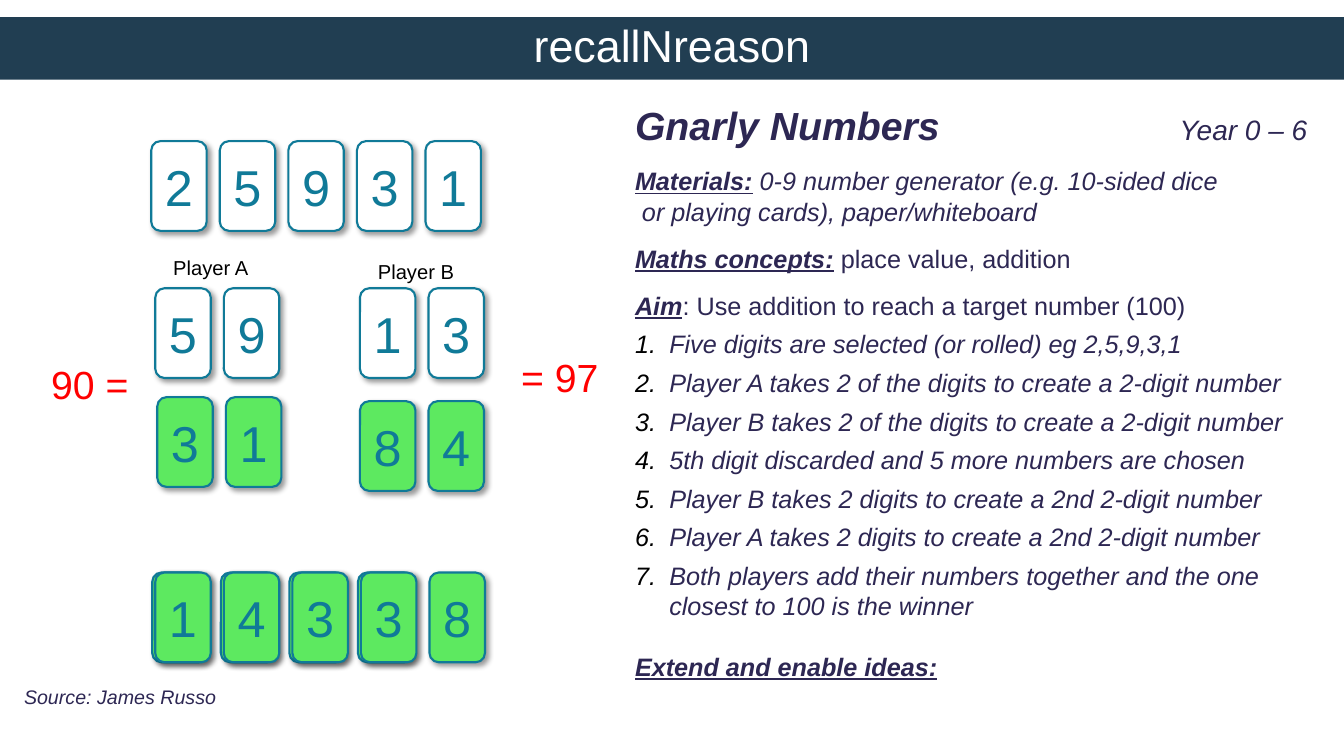
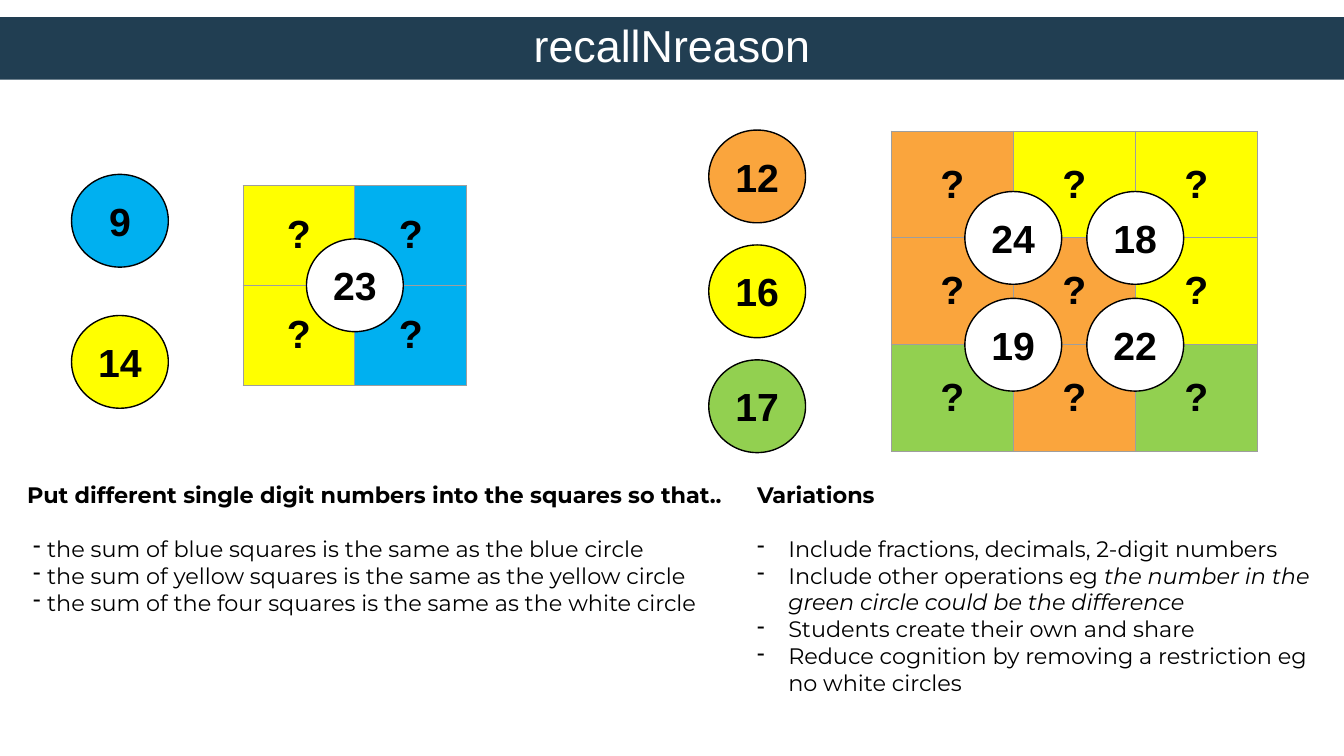
"""Build two maths game slides: a card game and a number square puzzle."""
from lxml import etree
from pptx import Presentation
from pptx.dml.color import RGBColor
from pptx.enum.shapes import MSO_SHAPE
from pptx.enum.text import MSO_ANCHOR, PP_ALIGN
from pptx.oxml.ns import qn
from pptx.util import Inches, Pt

RECT, OVAL = MSO_SHAPE.RECTANGLE, MSO_SHAPE.OVAL
CARD = MSO_SHAPE.FLOWCHART_ALTERNATE_PROCESS
CENTER, MIDDLE = PP_ALIGN.CENTER, MSO_ANCHOR.MIDDLE

NAVY, INK, TEAL, RED = "213E52", "2D2753", "107A98", "FF0000"
BLACK, WHITE, GRID_GREY = "000000", "FFFFFF", "9E9E9E"
CARD_GREEN, BLUE, YELLOW = "5DE960", "00B0F0", "FFFF00"
ORANGE, GREEN = "FAA53D", "92D050"
BODY_FONT, NOTE_FONT = "Arial", "Montserrat"
CARD_W, CARD_H, CARD_PITCH = 0.55, 0.89, 0.68
CIRCLE_W, CIRCLE_H = 0.96, 0.92


def rgb(hex_code):
    """Turn a hex string into a colour."""
    return RGBColor.from_string(hex_code)


def add_run(paragraph, text, size, color=BLACK, font=BODY_FONT, style=""):
    """Append a run; style holds any of the letters b, i and u."""
    run = paragraph.add_run()
    run.text = text
    run.font.name = font
    run.font.size = Pt(size)
    run.font.color.rgb = rgb(color)
    run.font.bold = "b" in style
    run.font.italic = "i" in style
    run.font.underline = "u" in style


def add_xml(parent, tag, **attributes):
    """Append a drawing element with its attributes and return it."""
    names = {name: str(value) for name, value in attributes.items()}
    return etree.SubElement(parent, qn(tag), names)


def set_bullet(paragraph, margin, hang, tag, **attributes):
    """Give a paragraph a hanging black bullet or number."""
    properties = paragraph._p.get_or_add_pPr()
    properties.set("marL", str(Inches(margin)))
    properties.set("indent", str(-Inches(hang)))
    add_xml(add_xml(properties, "a:buClr"), "a:srgbClr", val=BLACK)
    add_xml(properties, tag, **attributes)


def add_frame(slide, left, top, width, height):
    """Add a wrapping text box and return its text frame."""
    box = slide.shapes.add_textbox(
        Inches(left), Inches(top), Inches(width), Inches(height))
    box.text_frame.word_wrap = True
    return box.text_frame


def add_paragraph(frame, before):
    """Append a paragraph with the given space before it."""
    paragraph = frame.add_paragraph()
    paragraph.space_before = Pt(before)
    return paragraph


def add_label(slide, left, top, width, height, text, size, color=BLACK, style=""):
    """Add a one-line label and return its paragraph."""
    paragraph = add_frame(slide, left, top, width, height).paragraphs[0]
    add_run(paragraph, text, size, color, style=style)
    return paragraph


def add_block(slide, kind, left, top, width, height, fill, line=None, weight=1):
    """Add a flat filled shape, outlined when a line colour is given."""
    block = slide.shapes.add_shape(
        kind, Inches(left), Inches(top), Inches(width), Inches(height))
    block.shadow.inherit = False
    block.fill.solid()
    block.fill.fore_color.rgb = rgb(fill)
    if line:
        block.line.color.rgb = rgb(line)
        block.line.width = Pt(weight)
    else:
        block.line.fill.background()
    return block


def write_centered(holder, text, size, color, style=""):
    """Write one centred run in the middle of a shape or cell."""
    holder.text_frame.word_wrap = True
    paragraph = holder.text_frame.paragraphs[0]
    paragraph.alignment = CENTER
    add_run(paragraph, text, size, color, style=style)


def add_banner(slide):
    """Draw the title band that every slide carries."""
    add_block(slide, RECT, 0, 0.17, 13.33, 0.62, NAVY)
    title = add_label(slide, 1.82, 0.13, 9.69, 0.64, "recallNreason", 32, WHITE)
    title.alignment = CENTER


def add_cards(slide, left, top, digits, fill):
    """Lay out a row of digit cards from the left."""
    for index, digit in enumerate(digits):
        card = add_block(slide, CARD, left + index * CARD_PITCH, top,
                         CARD_W, CARD_H, fill, TEAL, 1.5)
        effects = card._element.spPr.find(qn("a:effectLst"))
        shadow = add_xml(effects, "a:outerShdw", blurRad=Pt(4), dist=Pt(3),
                         dir=45 * 60000, algn="tl", rotWithShape=0)
        shade = add_xml(shadow, "a:srgbClr", val=BLACK)
        add_xml(shade, "a:alpha", val=40000)
        card.text_frame.vertical_anchor = MIDDLE
        write_centered(card, digit, 36, TEAL)


def add_card_game(slide, left, top):
    """Draw both deals, the players' hands and their totals."""
    add_cards(slide, left + 1.09, top, "25931", WHITE)
    for name, x, y, first, second, second_x, second_y in (
            ("Player A", 1.13, 1.08, "59", "31", 1.15, 2.54),
            ("Player B", 3.16, 1.12, "13", "84", 3.16, 2.58)):
        add_label(slide, left + x + 0.08, top + y, 1.27, 0.34, name, 14.4)
        add_cards(slide, left + x, top + 1.46, first, WHITE)
        add_cards(slide, left + second_x, top + second_y, second, CARD_GREEN)
    for x, digits in ((1.1, "1433"), (1.13, "14338")):
        add_cards(slide, left + x, top + 4.28, digits, CARD_GREEN)
    for total, x, y in (("90 =", 0, 2.13), ("= 97", 4.66, 2.06)):
        add_label(slide, left + x, top + y, 1.24, 0.57, total, 28, RED)


def add_game_rules(slide, left, top, width, height):
    """Write the game's heading, needs, aim and numbered steps."""
    frame = add_frame(slide, left, top, width, height)
    heading = frame.paragraphs[0]
    tabs = add_xml(heading._p.get_or_add_pPr(), "a:tabLst")
    add_xml(tabs, "a:tab", pos=Inches(width - 0.46), algn="r")
    add_run(heading, "Gnarly Numbers", 28, INK, style="bi")
    add_run(heading, "\tYear 0 – 6", 20, INK, style="i")
    for topic, details, style in (
            ("Materials:", (" 0-9 number generator (e.g. 10-sided dice",
                            " or playing cards), paper/whiteboard"), "i"),
            ("Maths concepts:", (" place value, addition",), ""),
            ("Aim", (": Use addition to reach a target number (100)",), "")):
        paragraph = add_paragraph(frame, 12)
        add_run(paragraph, topic, 18, INK, style="biu")
        for index, detail in enumerate(details):
            if index:
                paragraph.add_line_break()
            add_run(paragraph, detail, 18, INK, style=style)
    for step in (
            "Five digits are selected (or rolled) eg 2,5,9,3,1",
            "Player A takes 2 of the digits to create a 2-digit number",
            "Player B takes 2 of the digits to create a 2-digit number",
            "5th digit discarded and 5 more numbers are chosen",
            "Player B takes 2 digits to create a 2nd 2-digit number",
            "Player A takes 2 digits to create a 2nd 2-digit number",
            "Both players add their numbers together and the one "
            "closest to 100 is the winner"):
        paragraph = add_paragraph(frame, 6)
        set_bullet(paragraph, 0.34, 0.34, "a:buAutoNum", type="arabicPeriod")
        add_run(paragraph, step, 18, INK, style="i")
    add_run(add_paragraph(frame, 21.5), "Extend and enable ideas:", 18, INK, style="biu")


def add_circle(slide, left, top, number, fill):
    """Draw a circle that holds a sum."""
    circle = add_block(slide, OVAL, left, top, CIRCLE_W, CIRCLE_H, fill, BLACK)
    circle.text_frame.vertical_anchor = MIDDLE
    write_centered(circle, number, 28, BLACK, "b")


def set_borders(cell):
    """Outline a table cell in grey."""
    properties = cell._tc.get_or_add_tcPr()
    for index, side in enumerate(("a:lnL", "a:lnR", "a:lnT", "a:lnB")):
        border = add_xml(properties, side, w=Pt(0.75))
        add_xml(add_xml(border, "a:solidFill"), "a:srgbClr", val=GRID_GREY)
        properties.insert(index, border)


def add_squares(slide, left, top, cell_w, cell_h, tints):
    """Draw the table of unknown squares, one colour per cell."""
    size = len(tints)
    table = slide.shapes.add_table(
        size, size, Inches(left), Inches(top),
        Inches(size * cell_w), Inches(size * cell_h)).table
    table.first_row = table.horz_banding = False
    for row, row_tints in enumerate(tints):
        table.rows[row].height = Inches(cell_h)
        table.columns[row].width = Inches(cell_w)
        for column, tint in enumerate(row_tints):
            cell = table.cell(row, column)
            cell.fill.solid()
            cell.fill.fore_color.rgb = rgb(tint)
            cell.vertical_anchor = MIDDLE
            set_borders(cell)
            write_centered(cell, "?", 28, BLACK, "b")


def add_puzzle(slide, left, top, squares_at, cell, tints, clues, clue_pitch, sums):
    """Draw colour clues, the squares and a white sum on each inner crossing."""
    for index, (number, fill) in enumerate(clues):
        add_circle(slide, left, top + index * clue_pitch, number, fill)
    squares_x, squares_y = left + squares_at[0], top + squares_at[1]
    cell_w, cell_h = cell
    add_squares(slide, squares_x, squares_y, cell_w, cell_h, tints)
    for row, row_sums in enumerate(sums, 1):
        for column, number in enumerate(row_sums, 1):
            add_circle(slide, squares_x + column * cell_w - CIRCLE_W / 2,
                       squares_y + row * cell_h - CIRCLE_H / 2, number, WHITE)


def add_notes_list(slide, left, top, width, height, heading, margin, hang, items):
    """Write a bold heading above a dashed list of items made of styled runs."""
    frame = add_frame(slide, left, top, width, height)
    add_run(frame.paragraphs[0], heading, 16, font=NOTE_FONT, style="b")
    for index, runs in enumerate(items):
        paragraph = add_paragraph(frame, 0 if index else 19.5)
        set_bullet(paragraph, margin, hang, "a:buChar", char="-")
        for text, style in runs:
            add_run(paragraph, text, 16, font=NOTE_FONT, style=style)


def build_card_slide(slide):
    """Compose the card game slide."""
    add_banner(slide)
    add_game_rules(slide, 6.2, 0.96, 7.13, 5.91)
    add_card_game(slide, 0.41, 1.4)
    add_label(slide, 0.14, 6.75, 6.94, 0.34, "Source: James Russo", 14, INK, "i")


def build_puzzle_slide(slide):
    """Compose the number square slide."""
    add_banner(slide)
    add_puzzle(slide, 0.71, 1.73, (1.7, 0.11), (1.11, 0.99),
               ((YELLOW, BLUE), (YELLOW, BLUE)),
               (("9", BLUE), ("14", YELLOW)), 1.4, (("23",),))
    add_puzzle(slide, 7.03, 1.29, (1.81, 0.01), (1.21, 1.06),
               ((ORANGE, YELLOW, YELLOW), (ORANGE, ORANGE, YELLOW),
                (GREEN, ORANGE, GREEN)),
               (("12", ORANGE), ("16", YELLOW), ("17", GREEN)), 1.14,
               (("24", "18"), ("19", "22")))
    add_notes_list(
        slide, 0.17, 4.72, 7.33, 1.45,
        "Put different single digit numbers into the squares so that..", 0.2, 0.14,
        ((("the sum of blue squares is the same as the blue circle", ""),),
         (("the sum of yellow squares is the same as the yellow circle", ""),),
         (("the sum of the four squares is the same as the white circle", ""),)))
    add_notes_list(
        slide, 7.41, 4.72, 5.92, 2.6, "Variations", 0.31, 0.31,
        ((("Include fractions, decimals, 2-digit numbers", ""),),
         (("Include other operations eg ", ""),
          ("the number in the green circle could be the difference", "i")),
         (("Students create their own and share", ""),),
         (("Reduce cognition by removing a restriction eg no white circles", ""),)))


def main():
    """Build and save the presentation."""
    deck = Presentation()
    deck.slide_width, deck.slide_height = Inches(13.33), Inches(7.5)
    for build in (build_card_slide, build_puzzle_slide):
        build(deck.slides.add_slide(deck.slide_layouts[6]))
    deck.save("out.pptx")


if __name__ == "__main__":
    main()
